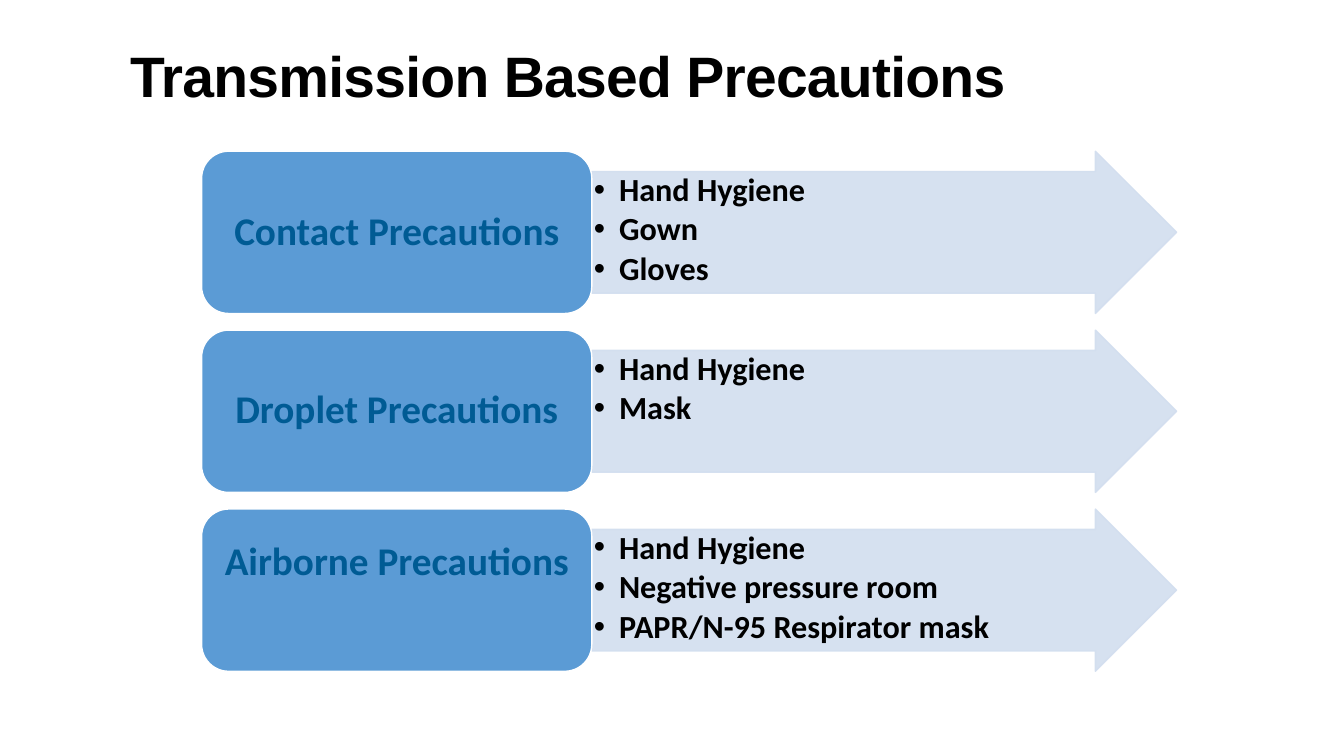
"""Build the slide of transmission based precautions."""
from lxml import etree
from pptx import Presentation
from pptx.dml.color import RGBColor
from pptx.enum.shapes import MSO_SHAPE
from pptx.enum.text import MSO_ANCHOR, PP_ALIGN
from pptx.oxml.ns import qn
from pptx.util import Inches, Pt

TITLE = "Transmission Based Precautions"
PRECAUTIONS = [
    ("Contact Precautions", ["Hand Hygiene", "Gown", "Gloves"], 0),
    ("Droplet Precautions", ["Hand Hygiene", "Mask"], 0),
    ("Airborne Precautions",
     ["Hand Hygiene", "Negative pressure room", "PAPR/N-95 Respirator mask"], 0.54),
]

BLACK = RGBColor(0x00, 0x00, 0x00)
WHITE = RGBColor(0xFF, 0xFF, 0xFF)
BLUE = RGBColor(0x5B, 0x9B, 0xD5)
PALE_BLUE = RGBColor(0xD2, 0xDE, 0xEF)
DARK_BLUE = RGBColor(0x00, 0x5B, 0x94)
ARROW, BOX = MSO_SHAPE.RIGHT_ARROW, MSO_SHAPE.ROUNDED_RECTANGLE
TOP, MIDDLE, BOTTOM = MSO_ANCHOR.TOP, MSO_ANCHOR.MIDDLE, MSO_ANCHOR.BOTTOM
LEFT, CENTER = PP_ALIGN.LEFT, PP_ALIGN.CENTER

SLIDE_SIZE = (13.33, 7.5)
TITLE_AREA = (0.88, 0.17, 9.5, 0.96)
GRID_LEFT, GRID_TOP = 2, 1.5
BOX_WIDTH, ARROW_WIDTH = 3.87, 5.8
ROW_HEIGHT, ROW_GAP = 1.61, 0.165
BULLET_INDENT = 0.25

TITLE_FORMAT = {
    "font": {"name": "Arial", "size": Pt(40.7), "bold": True},
    "color": BLACK,
    "paragraph": {"alignment": CENTER, "line_spacing": 0.85},
}
LABEL_FORMAT = {
    "font": {"name": "Calibri", "size": Pt(28), "bold": True},
    "color": DARK_BLUE,
    "paragraph": {"alignment": CENTER, "line_spacing": 0.9},
}
MEASURE_FORMAT = {
    "font": {"name": "Calibri", "size": Pt(23), "bold": True},
    "color": BLACK,
    "paragraph": {"alignment": LEFT, "line_spacing": 0.9,
                  "space_after": Pt(3.45), "level": 1},
}


def set_attributes(target, values):
    for name, value in values.items():
        setattr(target, name, value)


def write_text(shape, lines, text_format, anchor, margins):
    frame = shape.text_frame
    frame.word_wrap = True
    frame.vertical_anchor = anchor
    sides = ("margin_left", "margin_top", "margin_right", "margin_bottom")
    set_attributes(frame, dict(zip(sides, map(Inches, margins))))
    frame.text = "\n".join(lines)
    for paragraph in frame.paragraphs:
        set_attributes(paragraph, text_format["paragraph"])
        font = paragraph.runs[0].font
        set_attributes(font, text_format["font"])
        font.color.rgb = text_format["color"]
    return frame.paragraphs


def add_block(slide, kind, area, fill, line):
    shape = slide.shapes.add_shape(kind, *map(Inches, area))
    shape.shadow.inherit = False
    shape.fill.solid()
    shape.fill.fore_color.rgb = fill
    shape.line.color.rgb = line
    shape.line.width = Pt(1)
    return shape


def add_bullet(paragraph):
    properties = paragraph._p.get_or_add_pPr()
    properties.set("marL", str(Inches(BULLET_INDENT)))
    properties.set("indent", str(-Inches(BULLET_INDENT)))
    etree.SubElement(properties, qn("a:buFont")).set("typeface", "Arial")
    etree.SubElement(properties, qn("a:buChar")).set("char", "•")


def add_measures(slide, area, measures):
    arrow = add_block(slide, ARROW, area, PALE_BLUE, PALE_BLUE)
    arrow.adjustments[0] = 0.75
    for color in arrow._element.spPr.iter(qn("a:srgbClr")):
        etree.SubElement(color, qn("a:alpha")).set("val", "90000")
    for paragraph in write_text(arrow, measures, MEASURE_FORMAT, TOP, [0.02] * 4):
        add_bullet(paragraph)


def main():
    presentation = Presentation()
    presentation.slide_width, presentation.slide_height = map(Inches, SLIDE_SIZE)
    slide = presentation.slides.add_slide(presentation.slide_layouts[6])

    title = slide.shapes.add_textbox(*map(Inches, TITLE_AREA))
    heading = write_text(title, [TITLE], TITLE_FORMAT, BOTTOM, (0.1, 0.05, 0.1, 0.05))
    heading[0].runs[0]._r.get_or_add_rPr().set("spc", "-50")

    for row, (label, measures, lift) in enumerate(PRECAUTIONS):
        top = GRID_TOP + row * (ROW_HEIGHT + ROW_GAP)
        add_measures(slide, (GRID_LEFT + BOX_WIDTH, top, ARROW_WIDTH, ROW_HEIGHT), measures)
        box = add_block(slide, BOX, (GRID_LEFT, top, BOX_WIDTH, ROW_HEIGHT), BLUE, WHITE)
        write_text(box, [label], LABEL_FORMAT, MIDDLE, (0.12, 0.06, 0.12, 0.06 + lift))

    presentation.save("out.pptx")


if __name__ == "__main__":
    main()
